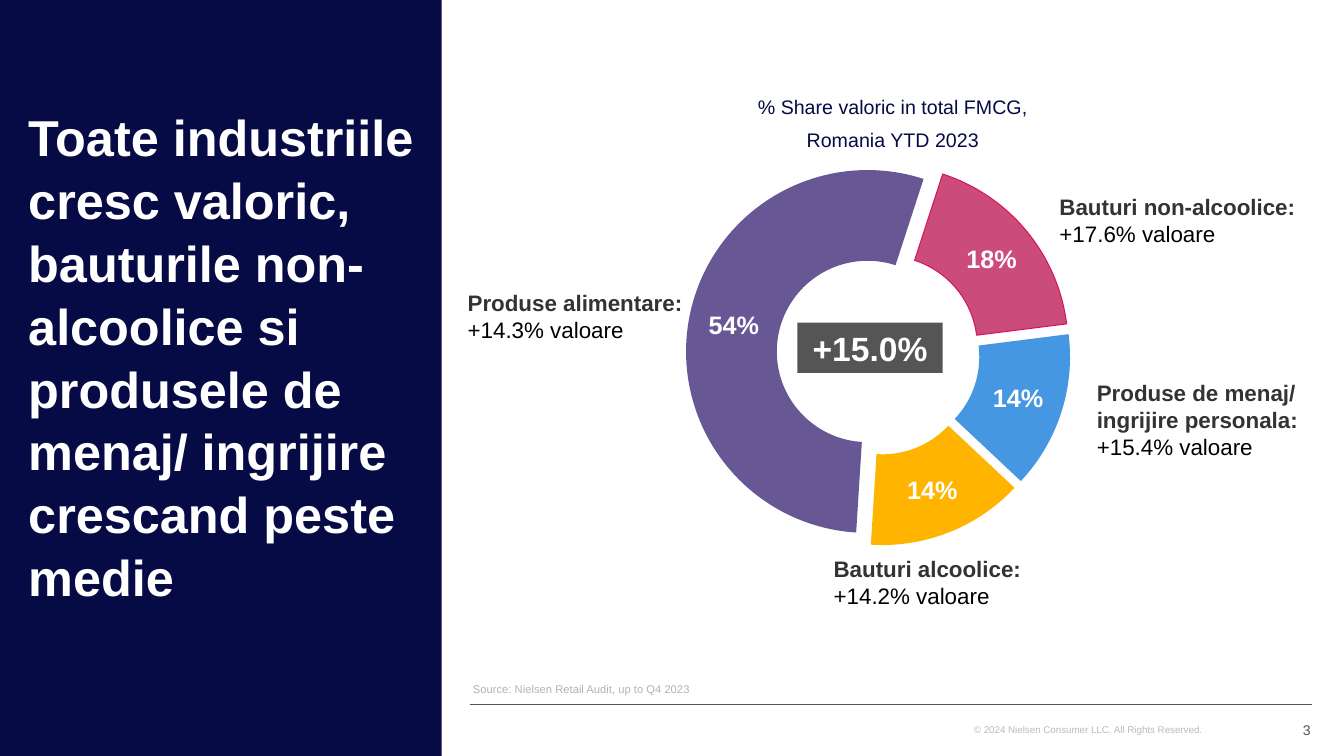
from lxml import etree
from pptx import Presentation
from pptx import util as u
from pptx.chart.data import CategoryChartData
from pptx.dml.color import RGBColor
from pptx.enum import chart as ch, shapes, text
from pptx.oxml.ns import qn

PX = 9144  # 100 px to the inch
FONT = "Arial"
NAVY = RGBColor(0x06, 0x0A, 0x45)
WHITE = RGBColor(0xFF, 0xFF, 0xFF)
BLACK = RGBColor(0, 0, 0)
DARK = RGBColor(0x33, 0x33, 0x33)
GREY = RGBColor(0x55, 0x55, 0x55)
SOURCE_GREY = RGBColor(0xB3, 0xB3, 0xB3)
LEGAL_GREY = RGBColor(0xBB, 0xBB, 0xBB)
BLUE_LINE = RGBColor(0x2C, 0x6D, 0xF6)
CRIMSON = RGBColor(0xD8, 0x14, 0x5E)

TITLE = ("Toate industriile cresc valoric, bauturile non-alcoolice si "
         "produsele de menaj/ ingrijire crescand peste medie")
SUBTITLE = ["% Share valoric in total FMCG,", "Romania YTD 2023"]
SOURCE = "Source: Nielsen Retail Audit, up to Q4 2023"
COPYRIGHT = "© 2024 Nielsen Consumer LLC. All Rights Reserved."
PAGE = "3"
TOTAL_GROWTH = "+15.0%"

# share, slice colour
SLICES = [
    (0.18, RGBColor(0xCB, 0x4B, 0x7A)),
    (0.14, RGBColor(0x46, 0x97, 0xE2)),
    (0.14, RGBColor(0xFF, 0xB5, 0x00)),
    (0.54, RGBColor(0x67, 0x58, 0x95)),
]
# industry, growth, box
INDUSTRIES = [
    ("Bauturi non-alcoolice:", "+17.6% valoare", (1041, 187, 290, 64)),
    ("Produse de menaj/ ingrijire personala:", "+15.4% valoare", (1078, 371, 255, 91)),
    ("Bauturi alcoolice:", "+14.2% valoare", (817, 546, 346, 84)),
    ("Produse alimentare:", "+14.3% valoare", (454, 282, 240, 64)),
]
PLOT = {"x": 0.03, "y": 0, "w": 0.945, "h": 0.999}


def emu(*lengths):
    return [n * PX for n in lengths]


def write(sp, lines, size, color, bold=False, align=text.PP_ALIGN.LEFT,
          anchor=text.MSO_ANCHOR.TOP, inset=0, spacing=None, after=0):
    """Fill a shape; a line is a string or a (string, colour, bold) tuple."""
    tf = sp.text_frame
    tf.word_wrap = True
    tf.auto_size = text.MSO_AUTO_SIZE.NONE
    tf.vertical_anchor = anchor
    tf.margin_left = tf.margin_right = inset * PX
    tf.margin_top = tf.margin_bottom = 5 * PX
    for i, line in enumerate(lines):
        words, c, b = (line, color, bold) if isinstance(line, str) else line
        p = tf.paragraphs[0] if i == 0 else tf.add_paragraph()
        p.alignment = align
        p.space_before, p.space_after = u.Pt(0), u.Pt(after)
        if spacing:
            p.line_spacing = spacing
        r = p.add_run()
        r.text = words
        r.font.name, r.font.size, r.font.bold = FONT, u.Pt(size), b
        r.font.color.rgb = c


def add_text(s, box, lines, size, color, **fmt):
    write(s.shapes.add_textbox(*emu(*box)), lines, size, color, **fmt)


def add_block(s, box, color):
    sp = s.shapes.add_shape(shapes.MSO_SHAPE.RECTANGLE, *emu(*box))
    sp.shadow.inherit = False
    sp.fill.solid()
    sp.fill.fore_color.rgb = color
    sp.line.fill.background()
    return sp


def place(sp, box):
    sp.left, sp.top, sp.width, sp.height = emu(*box)
    return sp


def add_share_chart(s, box):
    data = CategoryChartData(number_format="0%")
    data.categories = [str(i + 1) for i in range(len(SLICES))]
    data.add_series("Series 1", [share for share, _ in SLICES])
    chart = s.shapes.add_chart(ch.XL_CHART_TYPE.DOUGHNUT, *emu(*box), data).chart
    chart.has_legend = chart.has_title = False
    chart.font.name, chart.font.size = FONT, u.Pt(18)
    chart.font.color.rgb = GREY
    plot = chart.plots[0]
    plot.vary_by_categories = True
    series = plot.series[0]
    series.format.line.color.rgb = BLUE_LINE
    series.format.line.width = u.Pt(0.75)
    for i, (_, color) in enumerate(SLICES):
        fmt = series.points[i].format
        fmt.fill.solid()
        fmt.fill.fore_color.rgb = color
        fmt.line.fill.background()
    edge = series.points[0].format.line
    edge.color.rgb, edge.width = CRIMSON, u.Pt(0.75)

    labels = series.data_labels
    labels.show_value, labels.show_percentage = True, False
    labels.number_format, labels.number_format_is_linked = "0%", False
    labels.font.name, labels.font.size, labels.font.bold = FONT, u.Pt(18), True
    labels.font.color.rgb = WHITE

    explosion = etree.Element(qn("c:explosion"), val="12")
    series.format.line  # the series properties exist by now
    series_xml = chart.element.find(".//" + qn("c:ser"))
    series_xml.find(qn("c:spPr")).addnext(explosion)
    for tag, val in (("c:firstSliceAng", "18"), ("c:holeSize", "68")):
        chart.element.find(".//" + qn(tag)).set("val", val)

    area = chart.element.find(".//" + qn("c:plotArea"))
    old = area.find(qn("c:layout"))
    if old is not None:
        area.remove(old)
    layout = etree.Element(qn("c:layout"))
    area.insert(0, layout)
    manual = etree.SubElement(layout, qn("c:manualLayout"))
    settings = [("layoutTarget", "inner"), ("xMode", "edge"), ("yMode", "edge")]
    for tag, val in settings + list(PLOT.items()):
        etree.SubElement(manual, qn("c:" + tag), val=str(val))


def main():
    prs = Presentation()
    prs.slide_width, prs.slide_height = emu(1333, 750)
    s = prs.slides.add_slide(prs.slide_layouts[0])
    center, bottom = text.PP_ALIGN.CENTER, text.MSO_ANCHOR.BOTTOM
    middle = text.MSO_ANCHOR.MIDDLE

    panel = add_block(s, (0, 0, 438, 750), NAVY)
    panel.element.getparent().insert(2, panel.element)  # behind the title
    write(place(s.shapes.title, (28, 346, 383, 261)), [TITLE], 36, WHITE,
          bold=True, anchor=bottom, spacing=1.04)
    write(place(s.placeholders[1], (694, 88, 383, 48)), SUBTITLE, 14, NAVY,
          align=center, spacing=1.04, after=6)

    add_share_chart(s, (648, 160, 444, 382))
    write(add_block(s, (791, 320, 144, 50), GREY), [TOTAL_GROWTH], 24, WHITE,
          bold=True, align=center, anchor=middle, inset=10)
    for name, growth, box in INDUSTRIES:
        add_text(s, box, [(name, DARK, True), (growth, BLACK, False)], 16, DARK, inset=10)

    rule = s.shapes.add_connector(shapes.MSO_CONNECTOR.STRAIGHT, *emu(466, 699, 1301, 699))
    rule.line.color.rgb, rule.line.width = GREY, u.Pt(1)
    etree.SubElement(rule.element.spPr, qn("a:effectLst"))
    add_text(s, (469, 655, 831, 40), [SOURCE], 8, SOURCE_GREY, anchor=bottom)
    add_text(s, (966, 713, 284, 22), [COPYRIGHT], 7, LEGAL_GREY)
    add_text(s, (1201, 704, 99, 40), [PAGE], 10, GREY,
             align=text.PP_ALIGN.RIGHT, anchor=middle)
    prs.save("out.pptx")


if __name__ == "__main__":
    main()
